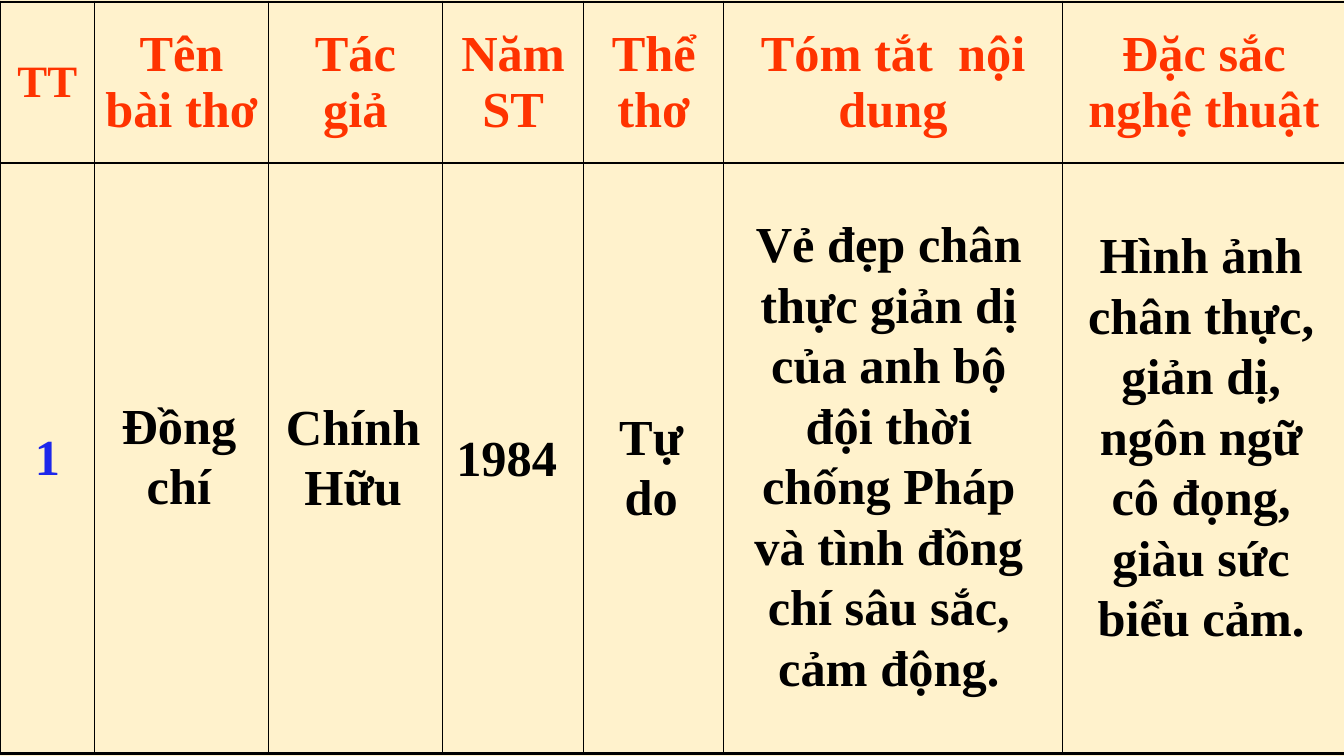
import dataclasses

import pptx
import pptx.dml.color
import pptx.enum.shapes
import pptx.enum.text
import pptx.oxml
import pptx.oxml.ns
import pptx.util

Cm = pptx.util.Cm
Pt = pptx.util.Pt
ALIGN = pptx.enum.text.PP_ALIGN


@dataclasses.dataclass(frozen=True)
class Theme:
    font: str = "Times New Roman"
    paper: str = "FFF2CC"
    heading: str = "FF3300"
    number: str = "1D27EB"
    ink: str = "000000"
    small: int = 32
    size: int = 36
    before: int = 6
    thin: float = 1
    thick: float = 2.25


THEME = Theme()
WIDTH, HEIGHT = 33.87, 19.05
COLUMNS = [2.39, 4.37, 4.39, 3.56, 3.53, 8.53, 7.14]
ROWS = [4.06, 14.88]
HEADINGS = ["TT", "Tên bài thơ", "Tác giả", "Năm ST", "Thể thơ",
            "Tóm tắt  nội dung", "Đặc sắc nghệ thuật"]
ENTRIES = [
    ("Đồng chí", (2.54, 9.8, 3.94, 3.33), {}),
    ("Chính Hữu", (6.93, 9.83, 3.94, 3.33), {}),
    ("1984", (11.25, 10.62, 3.05, 1.8), {"align": ALIGN.LEFT, "wrap": False}),
    ("Tự do", (15.19, 10.08, 2.44, 3.33), {}),
    ("Vẻ đẹp chân thực giản dị của anh bộ đội thời chống Pháp "
     "và tình đồng chí sâu sắc, cảm động.", (18.59, 5.23, 7.62, 12.57), {}),
    ("Hình ảnh chân thực, giản dị, ngôn ngữ cô đọng, giàu sức biểu cảm.",
     (26.97, 5.51, 6.6, 11.02), {"before": 0}),
]


def rgb(color):
    return pptx.dml.color.RGBColor.from_string(color)


def write(tf, text, color=THEME.ink, size=THEME.size, align=ALIGN.CENTER,
          before=THEME.before, wrap=True):
    tf.word_wrap = wrap
    p = tf.paragraphs[0]
    p.alignment = align
    p.space_before = Pt(before)
    r = p.add_run()
    r.text = text
    r.font.name = THEME.font
    r.font.size = Pt(size)
    r.font.bold = True
    r.font.color.rgb = rgb(color)


def set_borders(cell, **widths):
    tcPr = cell._tc.get_or_add_tcPr()
    for i, (side, width) in enumerate(widths.items()):
        ln = pptx.oxml.parse_xml(
            f'<a:ln{side} {pptx.oxml.ns.nsdecls("a")} w="{Pt(width)}">'
            f'<a:solidFill><a:srgbClr val="{THEME.ink}"/></a:solidFill>'
            f'</a:ln{side}>')
        tcPr.insert(i, ln)


def add_paper(s, left, top, width, height):
    sp = s.shapes.add_shape(pptx.enum.shapes.MSO_SHAPE.RECTANGLE,
                            Cm(left), Cm(top), Cm(width), Cm(height))
    sp.shadow.inherit = False
    sp.fill.solid()
    sp.fill.fore_color.rgb = rgb(THEME.paper)
    sp.line.fill.background()


def add_poem_table(s, left, top, width, height):
    table = s.shapes.add_table(len(ROWS), len(COLUMNS), Cm(left), Cm(top),
                               Cm(width), Cm(height)).table
    table.first_row = table.horz_banding = False
    for column, size in zip(table.columns, COLUMNS):
        column.width = Cm(size * width / sum(COLUMNS))
    for row, size in zip(table.rows, ROWS):
        row.height = Cm(size * height / sum(ROWS))
    last_row, last_column = len(ROWS) - 1, len(COLUMNS) - 1
    for i, row in enumerate(table.rows):
        for j, cell in enumerate(row.cells):
            cell.fill.background()
            cell.vertical_anchor = pptx.enum.text.MSO_ANCHOR.MIDDLE
            set_borders(cell,
                        L=THEME.thick if j == 0 else THEME.thin,
                        R=THEME.thick if j == last_column else THEME.thin,
                        T=THEME.thick if i == 0 else THEME.thin,
                        B=THEME.thick if i == last_row else THEME.thin)
    for j, heading in enumerate(HEADINGS):
        write(table.cell(0, j).text_frame, heading, color=THEME.heading,
              size=THEME.small if j == 0 else THEME.size)
    write(table.cell(1, 0).text_frame, "1", color=THEME.number)


def add_entry(s, text, box, **style):
    tf = s.shapes.add_textbox(*map(Cm, box)).text_frame
    write(tf, text, **style)
    tf.auto_size = pptx.enum.text.MSO_AUTO_SIZE.SHAPE_TO_FIT_TEXT


def main():
    prs = pptx.Presentation()
    prs.slide_width, prs.slide_height = Cm(WIDTH), Cm(HEIGHT)
    s = prs.slides.add_slide(prs.slide_layouts[6])
    add_paper(s, 0, 0, WIDTH, HEIGHT)
    add_poem_table(s, 0, 0.05, sum(COLUMNS), sum(ROWS))
    for text, box, style in ENTRIES:
        add_entry(s, text, box, **style)
    prs.save("out.pptx")


if __name__ == "__main__":
    main()
